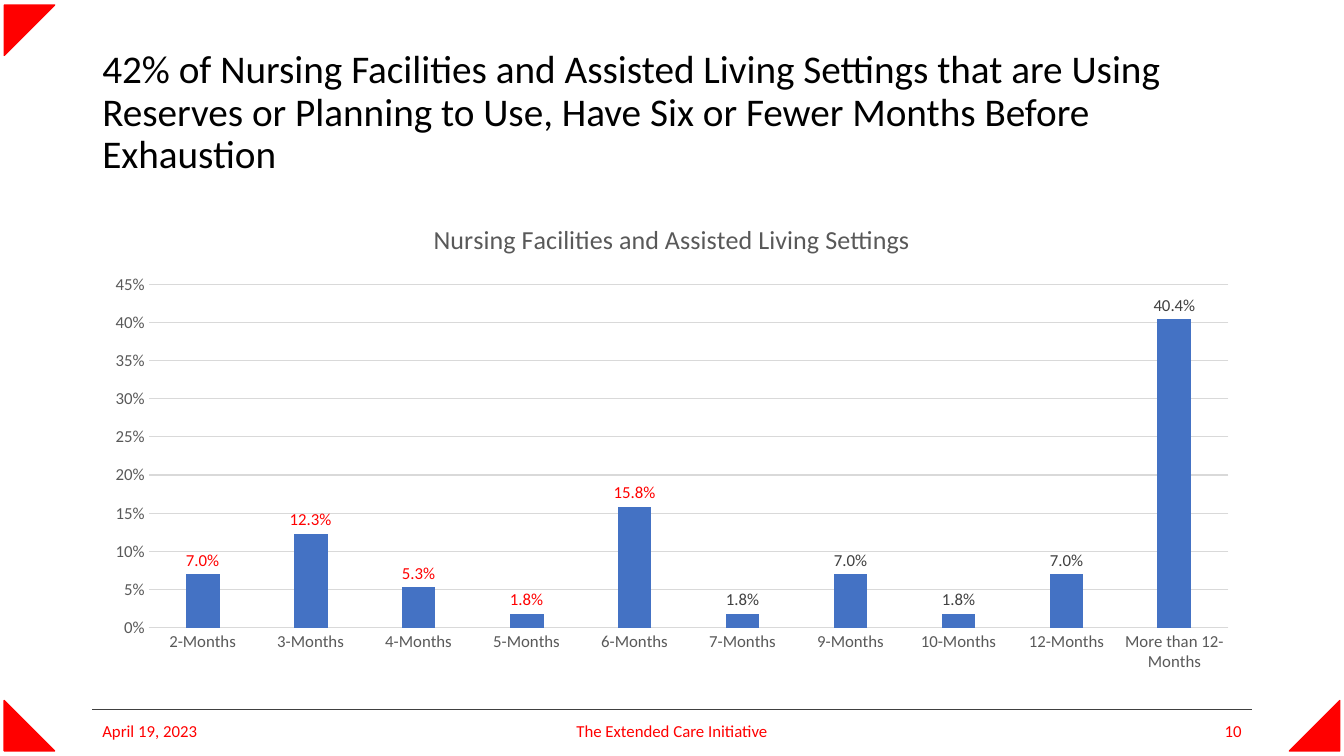
from dataclasses import dataclass

from lxml import etree
from pptx import Presentation
from pptx.chart.data import CategoryChartData
from pptx.dml.color import RGBColor
from pptx.enum.chart import XL_CHART_TYPE, XL_LABEL_POSITION, XL_TICK_MARK
from pptx.enum.shapes import MSO_CONNECTOR, MSO_SHAPE
from pptx.enum.text import MSO_ANCHOR, PP_ALIGN
from pptx.oxml.ns import qn
from pptx.slide import Slide
from pptx.text.text import Font
from pptx.util import Inches, Length, Pt

COLUMN_CLUSTERED = XL_CHART_TYPE.COLUMN_CLUSTERED
OUTSIDE_END = XL_LABEL_POSITION.OUTSIDE_END
NO_TICK = XL_TICK_MARK.NONE
STRAIGHT = MSO_CONNECTOR.STRAIGHT
RIGHT_TRIANGLE = MSO_SHAPE.RIGHT_TRIANGLE
MIDDLE = MSO_ANCHOR.MIDDLE
LEFT, CENTER, RIGHT = PP_ALIGN.LEFT, PP_ALIGN.CENTER, PP_ALIGN.RIGHT

RED = RGBColor(0xFF, 0x00, 0x00)
BLACK = RGBColor(0x00, 0x00, 0x00)
BLUE = RGBColor(0x44, 0x72, 0xC4)
RULE_GRAY = RGBColor(0x40, 0x40, 0x40)
LABEL_GRAY = RGBColor(0x40, 0x40, 0x40)
AXIS_GRAY = RGBColor(0x59, 0x59, 0x59)
GRID_GRAY = RGBColor(0xD9, 0xD9, 0xD9)

FONT = "Calibri"
COLUMNS, ROWS = 160, 90
PAGE_WIDTH, PAGE_HEIGHT = Inches(13.33), Inches(7.5)
MARGIN, CONTENT_WIDTH = 11, 138
FOOTER_TOP, FOOTER_HEIGHT = 84.6, 4.8
RULE_ROW = 84.4
CORNER_SIZE = 6

CHART_TITLE = "Nursing Facilities and Assisted Living Settings"
MONTH_SHARES = {
    "2-Months": 0.07,
    "3-Months": 0.123,
    "4-Months": 0.053,
    "5-Months": 0.018,
    "6-Months": 0.158,
    "7-Months": 0.018,
    "9-Months": 0.07,
    "10-Months": 0.018,
    "12-Months": 0.07,
    "More than 12-Months": 0.404,
}
SIX_OR_FEWER_COUNT = 5


@dataclass(frozen=True)
class Corner:
    column: float
    row: float
    rotation: int


@dataclass(frozen=True)
class TextArea:
    text: str
    column: float
    row: float
    width: float
    height: float
    size: int = 12
    color: RGBColor = RED
    align: PP_ALIGN = LEFT
    line_spacing: float = 1.0


CORNERS = (
    Corner(0.5, 0.6, 90),
    Corner(153.5, 83.4, 270),
    Corner(0.5, 83.4, 0),
)
TEXT_AREAS = (
    TextArea(
        "42% of Nursing Facilities and Assisted Living Settings that are Using "
        "Reserves or Planning to Use, Have Six or Fewer Months Before Exhaustion",
        MARGIN, 4.8, 140.9, 17.4, size=28, color=BLACK, line_spacing=0.9,
    ),
    TextArea("April 19, 2023", MARGIN, FOOTER_TOP, 36, FOOTER_HEIGHT),
    TextArea("The Extended Care Initiative", 53, FOOTER_TOP, 54, FOOTER_HEIGHT,
             align=CENTER),
    TextArea("10", 113, FOOTER_TOP, 36, FOOTER_HEIGHT, align=RIGHT),
)


def across(columns: float) -> Length:
    return Length(round(PAGE_WIDTH * columns / COLUMNS))


def down(rows: float) -> Length:
    return Length(round(PAGE_HEIGHT * rows / ROWS))


def style_font(font: Font, size: float, color: RGBColor) -> None:
    font.name = FONT
    font.size = Pt(size)
    font.bold = False
    font.color.rgb = color


def add_corner(page: Slide, corner: Corner) -> None:
    triangle = page.shapes.add_shape(
        RIGHT_TRIANGLE, across(corner.column), down(corner.row),
        across(CORNER_SIZE), down(CORNER_SIZE))
    triangle.rotation = corner.rotation
    triangle.shadow.inherit = False
    triangle.fill.solid()
    triangle.fill.fore_color.rgb = RED
    triangle.line.color.rgb = RED
    triangle.line.width = Pt(1)


def add_footer_rule(page: Slide) -> None:
    rule = page.shapes.add_connector(
        STRAIGHT, across(MARGIN), down(RULE_ROW),
        across(MARGIN + CONTENT_WIDTH), down(RULE_ROW))
    rule.line.color.rgb = RULE_GRAY
    rule.line.width = Pt(0.5)
    etree.SubElement(rule._element.spPr, qn("a:effectLst"))


def add_text(page: Slide, area: TextArea) -> None:
    box = page.shapes.add_textbox(
        across(area.column), down(area.row), across(area.width), down(area.height))
    frame = box.text_frame
    frame.word_wrap = True
    frame.vertical_anchor = MIDDLE
    para = frame.paragraphs[0]
    para.text = area.text
    para.alignment = area.align
    para.line_spacing = area.line_spacing
    style_font(para.font, area.size, area.color)


def add_month_chart(page: Slide) -> None:
    data = CategoryChartData(number_format="0.0%")
    data.categories = list(MONTH_SHARES)
    data.add_series(CHART_TITLE, list(MONTH_SHARES.values()))
    chart = page.shapes.add_chart(
        COLUMN_CLUSTERED, across(MARGIN), down(24),
        across(CONTENT_WIDTH), down(57.1), data).chart
    style_font(chart.font, 10, BLACK)
    chart.has_legend = False
    chart.has_title = True
    title = chart.chart_title.text_frame.paragraphs[0]
    title.text = CHART_TITLE
    style_font(title.font, 18.6, AXIS_GRAY)

    months, shares = chart.category_axis, chart.value_axis
    for axis in (months, shares):
        axis.major_tick_mark = NO_TICK
        axis.minor_tick_mark = NO_TICK
        style_font(axis.tick_labels.font, 12, AXIS_GRAY)
    shares.minimum_scale, shares.maximum_scale, shares.major_unit = 0, 0.45, 0.05
    shares.tick_labels.number_format = "0%"
    shares.tick_labels.number_format_is_linked = False
    shares.format.line.fill.background()
    for line in (months.format.line, shares.major_gridlines.format.line):
        line.color.rgb = GRID_GRAY
        line.width = Pt(0.75)

    plot = chart.plots[0]
    plot.vary_by_categories = False
    plot.gap_width = 219
    plot.overlap = -27
    series = plot.series[0]
    series.format.fill.solid()
    series.format.fill.fore_color.rgb = BLUE
    labels = series.data_labels
    labels.show_value = True
    labels.number_format = "0.0%"
    labels.number_format_is_linked = False
    labels.position = OUTSIDE_END
    style_font(labels.font, 12, LABEL_GRAY)
    for index in range(SIX_OR_FEWER_COUNT):
        label = series.points[index].data_label
        style_font(label.font, 12, RED)
        label.position = OUTSIDE_END


def main() -> None:
    deck = Presentation()
    deck.slide_width, deck.slide_height = PAGE_WIDTH, PAGE_HEIGHT
    page = deck.slides.add_slide(deck.slide_layouts[6])
    for corner in CORNERS:
        add_corner(page, corner)
    add_footer_rule(page)
    title, *footers = TEXT_AREAS
    add_text(page, title)
    add_month_chart(page)
    for footer in footers:
        add_text(page, footer)
    deck.save("out.pptx")


if __name__ == "__main__":
    main()
